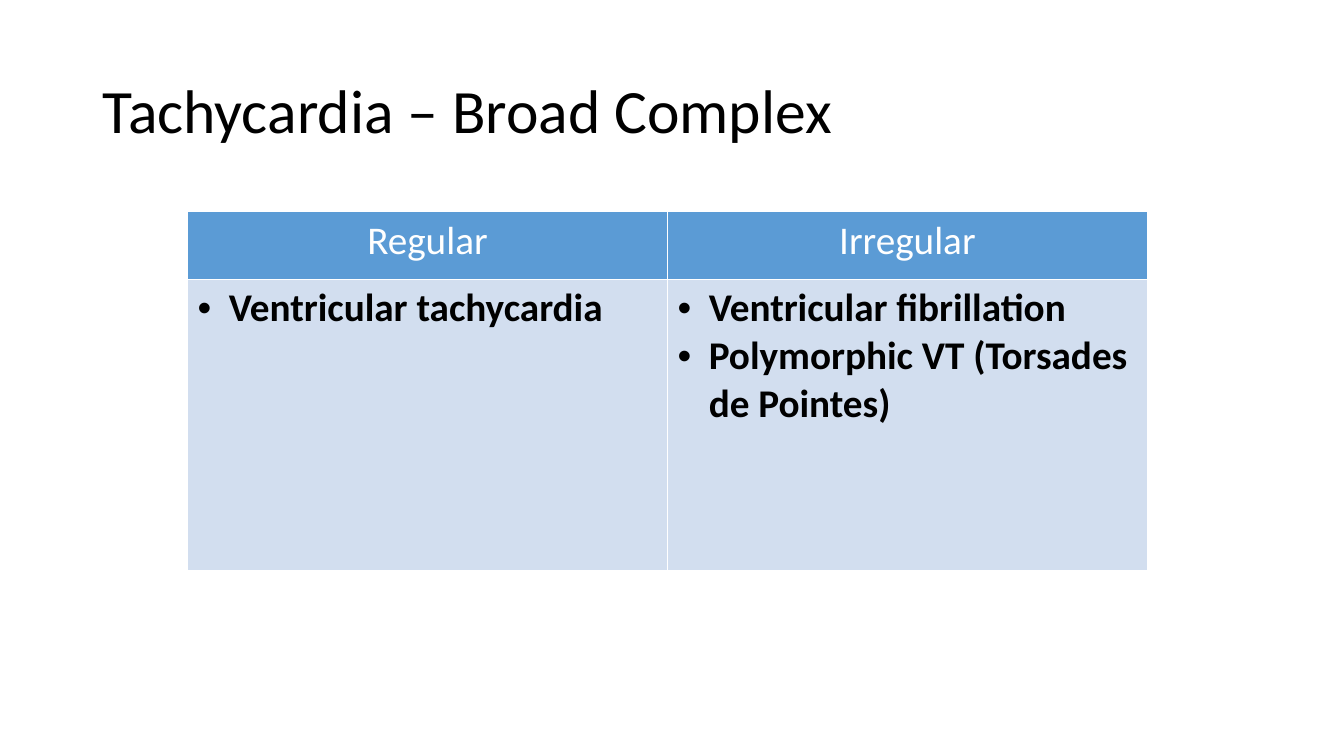
"""Build the slide on broad complex tachycardia."""
import pptx
import pptx.util
import pptx.dml.color
import pptx.enum.text
import pptx.oxml.ns
import lxml.etree

TITLE = "Tachycardia – Broad Complex"
COLUMNS = {
    "Regular": ["Ventricular tachycardia"],
    "Irregular": ["Ventricular fibrillation", "Polymorphic VT (Torsades de Pointes)"],
}
FONT = "Calibri"
WHITE, BLACK, HEADER_FILL, BODY_FILL = "FFFFFF", "000000", "5B9BD5", "D2DEEF"
WIDTH, HEIGHT = 13.33, 7.5
TITLE_BOX = (0.92, 0.4, 11.5, 1.45)
TABLE_LEFT, TABLE_TOP, COLUMN_WIDTH = 1.86, 2.1, 4.76
ROW_HEIGHTS = (0.67, 2.89)
BULLET_INDENT = 0.31


def color(value):
    return pptx.dml.color.RGBColor.from_string(value)


def inches(*lengths):
    return [pptx.util.Inches(length) for length in lengths]


def format_runs(paragraph, size, font_color, bold=False):
    for run in paragraph.runs:
        run.font.name = FONT
        run.font.size = pptx.util.Pt(size)
        run.font.bold = bold
        run.font.color.rgb = color(font_color)


def add_child(parent, tag, **attributes):
    return lxml.etree.SubElement(parent, pptx.oxml.ns.qn(tag), **attributes)


def add_bullet(paragraph):
    properties = paragraph._p.get_or_add_pPr()
    indent = pptx.util.Inches(BULLET_INDENT)
    properties.set("marL", str(indent))
    properties.set("indent", str(-indent))
    add_child(properties, "a:buFont", typeface="Arial")
    add_child(properties, "a:buChar", char="•")


def add_borders(cell):
    properties = cell._tc.get_or_add_tcPr()
    for side in ("a:lnL", "a:lnR", "a:lnT", "a:lnB"):
        line = add_child(properties, side, w=str(pptx.util.Pt(1)))
        add_child(add_child(line, "a:solidFill"), "a:srgbClr", val=WHITE)


def fill_cell(cell, lines, fill, font_color, header):
    add_borders(cell)
    cell.fill.solid()
    cell.fill.fore_color.rgb = color(fill)
    cell.text_frame.text = "\n".join(lines)
    for paragraph in cell.text_frame.paragraphs:
        if header:
            paragraph.alignment = pptx.enum.text.PP_ALIGN.CENTER
        else:
            add_bullet(paragraph)
        format_runs(paragraph, 28, font_color, bold=not header)


def add_title(slide):
    title = slide.shapes.title
    title.left, title.top, title.width, title.height = inches(*TITLE_BOX)
    title.text_frame.text = TITLE
    title.text_frame.vertical_anchor = pptx.enum.text.MSO_ANCHOR.MIDDLE
    paragraph = title.text_frame.paragraphs[0]
    paragraph.alignment = pptx.enum.text.PP_ALIGN.LEFT
    paragraph.line_spacing = 0.9
    format_runs(paragraph, 44, BLACK)


def add_rhythm_table(slide):
    box = inches(TABLE_LEFT, TABLE_TOP, COLUMN_WIDTH * len(COLUMNS), sum(ROW_HEIGHTS))
    table = slide.shapes.add_table(len(ROW_HEIGHTS), len(COLUMNS), *box).table
    for row, height in zip(table.rows, ROW_HEIGHTS):
        row.height = pptx.util.Inches(height)
    for index, (heading, rhythms) in enumerate(COLUMNS.items()):
        table.columns[index].width = pptx.util.Inches(COLUMN_WIDTH)
        fill_cell(table.cell(0, index), [heading], HEADER_FILL, WHITE, True)
        fill_cell(table.cell(1, index), rhythms, BODY_FILL, BLACK, False)


def main():
    presentation = pptx.Presentation()
    presentation.slide_width, presentation.slide_height = inches(WIDTH, HEIGHT)
    slide = presentation.slides.add_slide(presentation.slide_layouts[5])
    add_title(slide)
    add_rhythm_table(slide)
    presentation.save("out.pptx")


if __name__ == "__main__":
    main()
